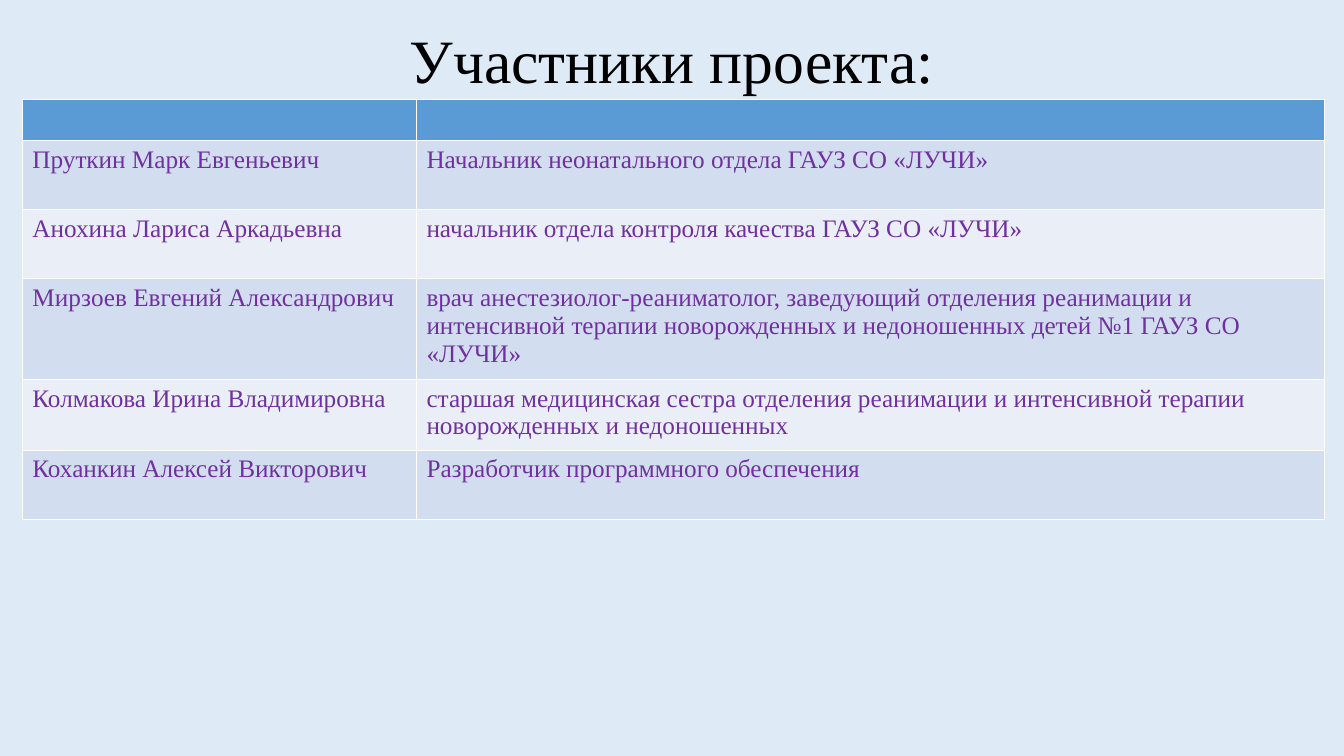
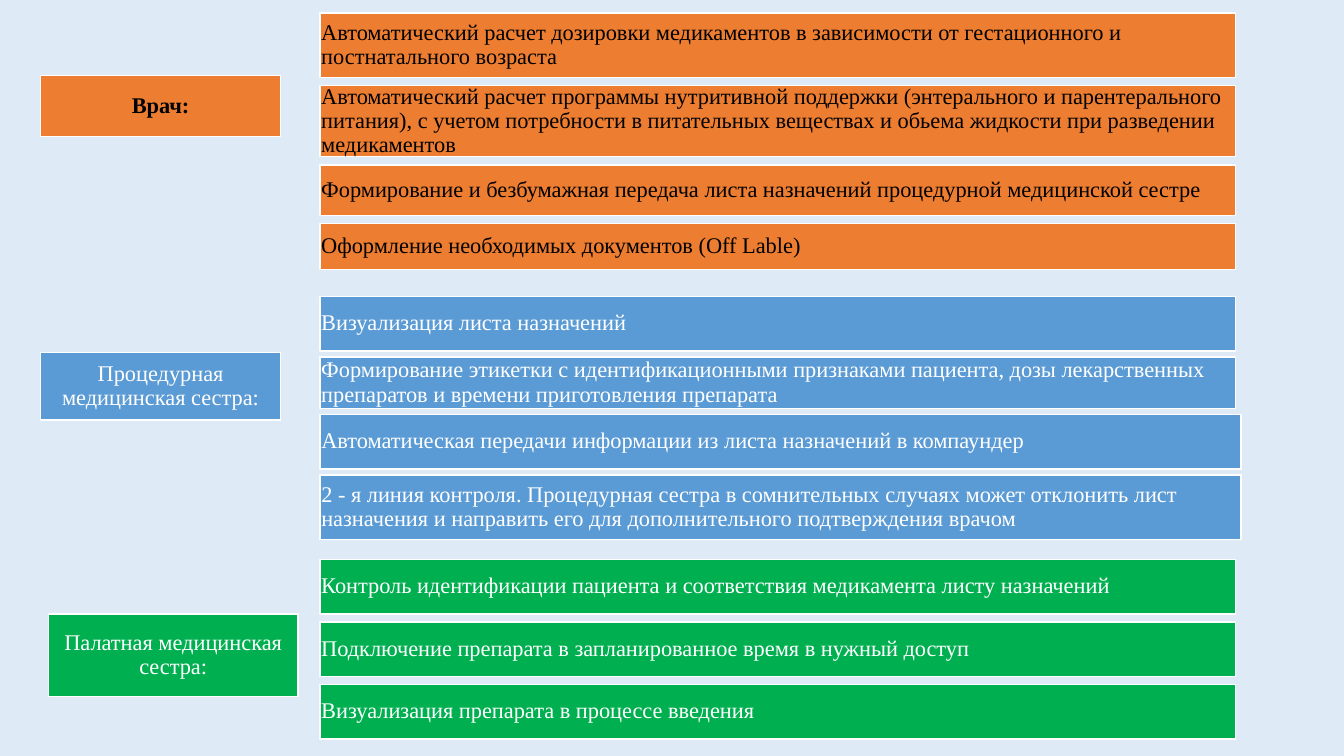
from pptx import Presentation
from pptx.dml.color import RGBColor as RGB
from pptx.enum.shapes import MSO_SHAPE as SHAPE
from pptx.enum.text import MSO_ANCHOR as ANCHOR, PP_ALIGN as ALIGN
from pptx.util import Pt

FONT = "Times New Roman"
PALE = RGB(0xDE, 0xEB, 0xF7)
BLACK = RGB(0, 0, 0)
WHITE = RGB(0xFF, 0xFF, 0xFF)
PURPLE = RGB(0x70, 0x30, 0xA0)
ORANGE = RGB(0xED, 0x7D, 0x31)
BLUE = RGB(0x5B, 0x9B, 0xD5)
GREEN = RGB(0x00, 0xB0, 0x50)
BANDS = RGB(0xD2, 0xDE, 0xEF), RGB(0xEA, 0xEF, 0xF7)

HEAD = 29.5
BAR_X = 228.5
BAR_W = 654
WIDE_W = 658

# Name, post, row height
TEAM = [
    ("Пруткин Марк Евгеньевич",
     "Начальник неонатального отдела ГАУЗ СО «ЛУЧИ»", 49.3),
    ("Анохина Лариса Аркадьевна",
     "начальник отдела контроля качества ГАУЗ СО «ЛУЧИ»", 49.3),
    ("Мирзоев Евгений Александрович",
     "врач анестезиолог-реаниматолог, заведующий отделения реанимации и "
     "интенсивной терапии новорожденных и недоношенных детей №1 ГАУЗ СО "
     "«ЛУЧИ»", 67),
    ("Колмакова Ирина Владимировна",
     "старшая медицинская сестра отделения реанимации и интенсивной терапии "
     "новорожденных и недоношенных", 49.3),
    ("Коханкин Алексей Викторович",
     "Разработчик программного обеспечения", 49.3),
]

# Task, bar height, bar width
DOCTOR = [
    ("Автоматический расчет дозировки медикаментов в зависимости от "
     "гестационного и постнатального возраста", 46, BAR_W),
    ("Автоматический расчет программы нутритивной поддержки (энтерального и "
     "парентерального питания), с учетом потребности в питательных веществах "
     "и обьема жидкости при разведении медикаментов", 51, BAR_W),
    ("Формирование и безбумажная передача листа назначений процедурной "
     "медицинской сестре", 36, BAR_W),
    ("Оформление необходимых документов (Off Lable)", 33, BAR_W),
]
NURSE = [
    ("Визуализация листа назначений", 39, BAR_W),
    ("Формирование этикетки с идентификационными признаками пациента, дозы "
     "лекарственных препаратов и времени приготовления препарата",
     36.7, BAR_W),
    ("Автоматическая передачи информации из листа назначений в компаундер",
     39, WIDE_W),
    ("2 - я линия контроля. Процедурная сестра в сомнительных случаях может "
     "отклонить лист назначения и направить его для дополнительного "
     "подтверждения врачом", 46, WIDE_W),
]
WARD = [
    ("Контроль идентификации пациента и соответствия медикамента листу "
     "назначений", 39, BAR_W),
    ("Подключение препарата в запланированное время в нужный доступ",
     39, BAR_W),
    ("Визуализация препарата в процессе введения", 39, BAR_W),
]


def text(frame, words, size=16, color=BLACK, bold=False, align=ALIGN.LEFT,
         space=None):
    frame.word_wrap = True
    para = frame.paragraphs[0]
    para.alignment = align
    para.line_spacing = space
    run = para.add_run()
    run.text = words
    font = run.font
    font.name, font.size, font.bold = FONT, Pt(size), bold
    font.color.rgb = color


def paint(item, color):
    item.fill.solid()
    item.fill.fore_color.rgb = color


def title(slide, words):
    box = slide.shapes.add_textbox(Pt(66), Pt(7), Pt(828), Pt(77))
    frame = box.text_frame
    frame.vertical_anchor = ANCHOR.MIDDLE
    text(frame, words, size=44, align=ALIGN.CENTER, space=0.9)


def roster(slide, team):
    """Table of names and posts under an empty header row."""
    sizes = [HEAD] + [high for *_, high in team]
    table = slide.shapes.add_table(len(sizes), 2, Pt(16), Pt(71), Pt(930),
                                   Pt(sum(sizes))).table
    for col, wide in zip(table.columns, (281.5, 648.5)):
        col.width = Pt(wide)
    for row, high in zip(table.rows, sizes):
        row.height = Pt(high)
    for cell in table.rows[0].cells:
        paint(cell, BLUE)
    for num, (name, post, _) in enumerate(team):
        for cell, words in zip(table.rows[num + 1].cells, (name, post)):
            paint(cell, BANDS[num % 2])
            text(cell.text_frame, words, size=18, color=PURPLE)


def block(slide, place, words, fill, **style):
    shape = slide.shapes.add_shape(SHAPE.RECTANGLE, *map(Pt, place))
    shape.shadow.inherit = False
    paint(shape, fill)
    shape.line.color.rgb = WHITE
    shape.line.width = Pt(1)
    frame = shape.text_frame
    frame.vertical_anchor = ANCHOR.MIDDLE
    frame.margin_left = frame.margin_right = Pt(1)
    frame.margin_top = frame.margin_bottom = Pt(1)
    text(frame, words, space=0.9, **style)


def role(slide, name, place, tasks, top, gap, fill, color=WHITE, bold=False):
    """Label on the left and its stack of task bars on the right."""
    block(slide, place, name, fill, color=color, bold=bold,
          align=ALIGN.CENTER)
    for words, high, wide in tasks:
        block(slide, (BAR_X, top, wide, high), words, fill, color=color)
        top += high + gap


def main():
    prs = Presentation()
    prs.slide_width, prs.slide_height = Pt(960), Pt(540)
    paint(prs.slide_master.background, PALE)
    blank = prs.slide_layouts[6]

    people = prs.slides.add_slide(blank)
    title(people, "Участники проекта:")
    roster(people, TEAM)

    duties = prs.slides.add_slide(blank)
    role(duties, "Врач:", (29, 54, 171.5, 43.5), DOCTOR, 9.2, 5.8, ORANGE,
         color=BLACK, bold=True)
    role(duties, "Процедурная медицинская сестра:", (29, 252, 171.5, 48),
         NURSE, 211.7, 4.3, BLUE)
    role(duties, "Палатная медицинская сестра:", (34.5, 438.5, 178.5, 59),
         WARD, 399.6, 5.6, GREEN)

    prs.save("out.pptx")


if __name__ == "__main__":
    main()
